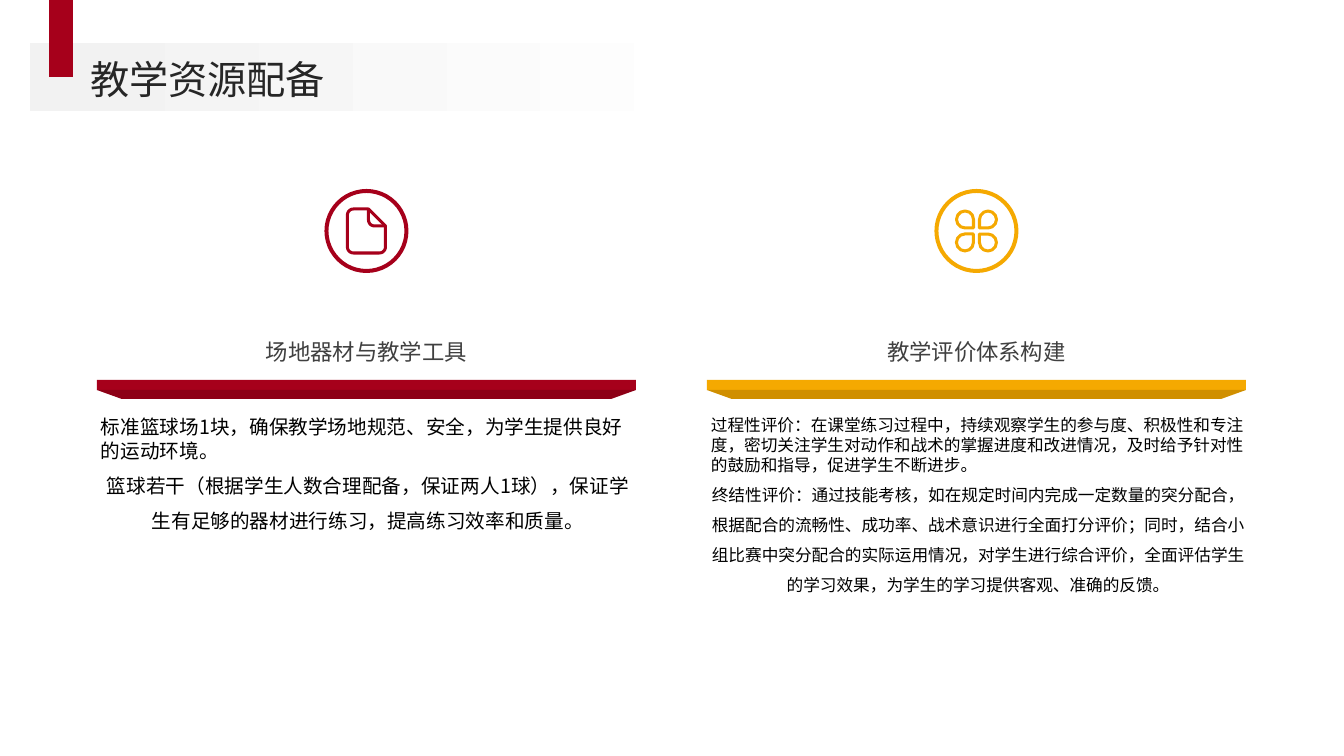
from math import cos, radians, sin

from lxml.etree import SubElement
from pptx import Presentation
from pptx.dml.color import RGBColor
from pptx.enum.shapes import MSO_SHAPE as Preset
from pptx.enum.text import MSO_ANCHOR as Anchor, MSO_AUTO_SIZE as AutoSize, PP_ALIGN as Align
from pptx.oxml.ns import qn
from pptx.util import Pt

FONT = "Noto Sans CJK SC"
RED, GOLD = "A6001B", "F5A901"
TITLE = "教学资源配备"
COLUMNS = [
    {
        "heading": "场地器材与教学工具", "color": RED, "icon": "document", "size": 14,
        "body": [
            "标准篮球场1块，确保教学场地规范、安全，为学生提供良好的运动环境。",
            "篮球若干（根据学生人数合理配备，保证两人1球），保证学生有足够的器材进行练习，提高练习效率和质量。",
        ],
    },
    {
        "heading": "教学评价体系构建", "color": GOLD, "icon": "petals", "size": 11.9,
        "body": [
            "过程性评价：在课堂练习过程中，持续观察学生的参与度、积极性和专注度，"
            "密切关注学生对动作和战术的掌握进度和改进情况，及时给予针对性的鼓励和指导，促进学生不断进步。",
            "终结性评价：通过技能考核，如在规定时间内完成一定数量的突分配合，"
            "根据配合的流畅性、成功率、战术意识进行全面打分评价；同时，结合小组比赛中突分配合的实际运用情况，"
            "对学生进行综合评价，全面评估学生的学习效果，为学生的学习提供客观、准确的反馈。",
        ],
    },
]

# Lengths in px
SLIDE_WIDTH, SLIDE_HEIGHT = 1344, 756
COLUMN_LEFT, COLUMN_PITCH, COLUMN_WIDTH = 97, 610, 539
ICON_Y, RING_SIZE, RING_LINE, ICON_LINE = 231, 80, 4, 3
HEADING_TOP, HEADING_HEIGHT = 282, 83
BAR_TOP, BAR_EDGE, BAR_HEIGHT, BAR_TAPER = 380, 10, 19, 25
BODY_INSET, BODY_TOP, BODY_WIDTH, BODY_HEIGHT = 4, 415, 534, 182
PETAL_SIZE, PETAL_PITCH = 17, 23


def px(length):
    return round(length * 914400 / 100.8)


def rgb(color):
    return RGBColor.from_string(color)


def paint(shape, fill=None, line=None, weight=0):
    shape.shadow.inherit = False
    if fill:
        shape.fill.solid()
        shape.fill.fore_color.rgb = rgb(fill)
    else:
        shape.fill.background()
    if line:
        shape.line.color.rgb = rgb(line)
        shape.line.width = px(weight)
    else:
        shape.line.fill.background()
    return shape


def add_preset(slide, preset, left, top, width, height, **style):
    shape = slide.shapes.add_shape(preset, px(left), px(top), px(width), px(height))
    return paint(shape, **style)


def add_outline(slide, points, closed=True, **style):
    corners = [(px(x), px(y)) for x, y in points]
    builder = slide.shapes.build_freeform(*corners[0], scale=1)
    builder.add_line_segments(corners[1:], close=closed)
    return paint(builder.convert_to_shape(), **style)


def place(box, left, top, width, height):
    box.left, box.top, box.width, box.height = map(px, (left, top, width, height))


def write(box, lines, size, color, formats, anchor=Anchor.TOP):
    """Fill a box with one paragraph per line; formats holds (alignment, line spacing) pairs."""
    frame = box.text_frame
    frame.word_wrap = True
    frame.auto_size = AutoSize.NONE
    frame.vertical_anchor = anchor
    frame.margin_left = frame.margin_right = frame.margin_top = frame.margin_bottom = 0
    for index, (line, (alignment, spacing)) in enumerate(zip(lines, formats)):
        para = frame.add_paragraph() if index else frame.paragraphs[0]
        para.alignment, para.line_spacing = alignment, spacing
        span = para.add_run()
        span.text = line
        span.font.size = Pt(size)
        span.font.color.rgb = rgb(color)
        span.font.name = FONT
        SubElement(span.font._element, qn("a:ea"), typeface=FONT)


def add_text(slide, area, lines, **style):
    box = slide.shapes.add_textbox(0, 0, 0, 0)
    place(box, *area)
    write(box, lines, **style)


def arc(x, y, radius, start):
    """Points of a quarter turn, clockwise on the slide, from start degrees."""
    angles = [radians(start + step) for step in range(0, 91, 10)]
    return [(x + radius * cos(a), y + radius * sin(a)) for a in angles]


def draw_document(slide, x, y, color):
    half_width, half_height, radius, fold = 19, 22, 6, 17
    left, right = x - half_width, x + half_width
    top, bottom = y - half_height, y + half_height
    sheet = [(right - fold, top), (right, top + fold)]
    sheet += arc(right - radius, bottom - radius, radius, 0)
    sheet += arc(left + radius, bottom - radius, radius, 90)
    sheet += arc(left + radius, top + radius, radius, 180)
    flap = [(right, top + fold)]
    flap += arc(right - fold + radius, top + fold - radius, radius, 90)
    flap += [(right - fold, top)]
    add_outline(slide, sheet, line=color, weight=ICON_LINE)
    add_outline(slide, flap, closed=False, line=color, weight=ICON_LINE)


def draw_petals(slide, x, y, color):
    for side_x, side_y, turn in [(-1, -1, 90), (1, -1, 180), (1, 1, 270), (-1, 1, 0)]:
        left = x + (side_x * PETAL_PITCH - PETAL_SIZE) / 2
        top = y + (side_y * PETAL_PITCH - PETAL_SIZE) / 2
        petal = add_preset(slide, Preset.TEAR, left, top, PETAL_SIZE, PETAL_SIZE,
                           line=color, weight=ICON_LINE)
        petal.rotation = turn


ICONS = {"document": draw_document, "petals": draw_petals}


def draw_bar(slide, left, color):
    right, edge, bottom = left + COLUMN_WIDTH, BAR_TOP + BAR_EDGE, BAR_TOP + BAR_HEIGHT
    bevel = [(right, edge), (right - BAR_TAPER, bottom), (left + BAR_TAPER, bottom), (left, edge)]
    add_outline(slide, [(left, BAR_TOP), (right, BAR_TOP)] + bevel, fill=color)
    shade = add_outline(slide, bevel, fill="000000")
    tint = shade._element.spPr.find(qn("a:solidFill"))[0]
    SubElement(tint, qn("a:alpha"), val="15000")


def draw_column(slide, left, column):
    center, color = left + COLUMN_WIDTH / 2, column["color"]
    add_preset(slide, Preset.OVAL, center - RING_SIZE / 2, ICON_Y - RING_SIZE / 2,
               RING_SIZE, RING_SIZE, line=color, weight=RING_LINE)
    ICONS[column["icon"]](slide, center, ICON_Y, color)
    draw_bar(slide, left, color)
    add_text(slide, (left, HEADING_TOP, COLUMN_WIDTH, HEADING_HEIGHT), [column["heading"]],
             size=16, color="404040", formats=[(Align.CENTER, 1.3)], anchor=Anchor.BOTTOM)
    add_text(slide, (left + BODY_INSET, BODY_TOP, BODY_WIDTH, BODY_HEIGHT), column["body"],
             size=column["size"], color="000000",
             formats=[(Align.LEFT, 1.0), (Align.CENTER, 1.5)])


def draw_title(slide):
    band = add_preset(slide, Preset.RECTANGLE, 30, 43, 831, 68)
    band.fill.gradient()
    band.fill.gradient_angle = 0
    for stop, (position, color) in zip(band.fill.gradient_stops, [(0.05, "F2F2F2"), (0.84, "FFFFFF")]):
        stop.position = position
        stop.color.rgb = rgb(color)
    add_preset(slide, Preset.RECTANGLE, 49, 0, 24, 77, fill=RED)
    title = slide.shapes.title
    place(title, 90, 51, 1179, 51)
    write(title, [TITLE], size=28, color="262626", formats=[(Align.LEFT, 1.1)], anchor=Anchor.MIDDLE)
    slide.shapes._spTree.append(title._element)  # bring in front of the band


def main():
    deck = Presentation()
    deck.slide_width, deck.slide_height = px(SLIDE_WIDTH), px(SLIDE_HEIGHT)
    page = deck.slides.add_slide(deck.slide_layouts[5])
    for index, column in enumerate(COLUMNS):
        draw_column(page, COLUMN_LEFT + index * COLUMN_PITCH, column)
    draw_title(page)
    deck.save("out.pptx")


if __name__ == "__main__":
    main()
